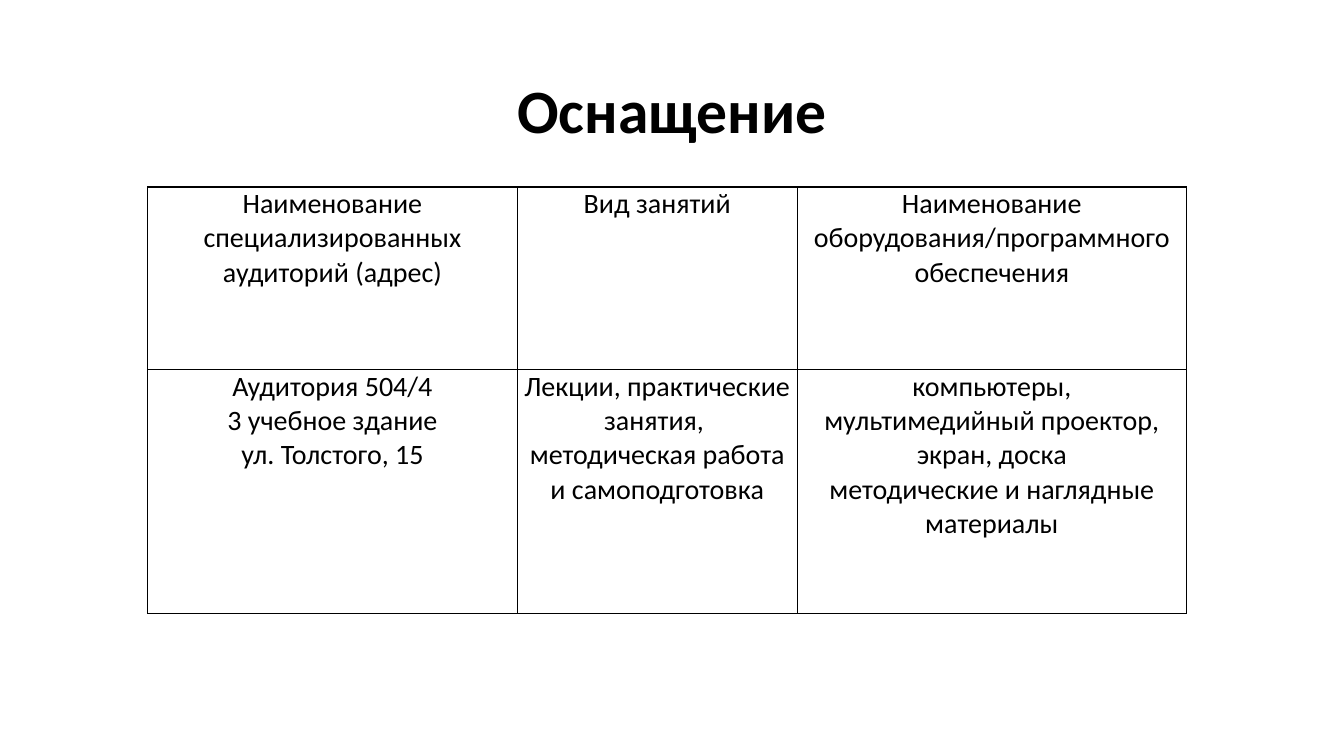
from lxml.etree import SubElement
from pptx import Presentation
from pptx.dml.color import RGBColor
from pptx.enum.text import MSO_ANCHOR as Anchor, PP_ALIGN as Align
from pptx.oxml.ns import qn
from pptx.util import Pt

BLACK = "000000"


def color(hex_string):
    return RGBColor.from_string(hex_string)


def add_text(para, text, size, bold=False):
    para.alignment = Align.CENTER
    span = para.add_run()
    span.text = text
    span.font.name = "Calibri"
    span.font.size = Pt(size)
    span.font.bold = bold
    span.font.color.rgb = color(BLACK)


deck = Presentation()
deck.slide_width, deck.slide_height = Pt(960), Pt(540)
page = deck.slides.add_slide(deck.slide_layouts[6])

# Title
title_box = page.shapes.add_textbox(Pt(66), Pt(28.75), Pt(828), Pt(104.4))
title_frame = title_box.text_frame
title_frame.word_wrap = True
title_frame.vertical_anchor = Anchor.MIDDLE
title_para = title_frame.paragraphs[0]
title_para.line_spacing = 0.9
add_text(title_para, "Оснащение", 44, bold=True)

# Equipment table: each cell is a list of paragraphs
rows = [
    [
        ["Наименование специализированных аудиторий (адрес)"],
        ["Вид занятий"],
        ["Наименование оборудования/программного обеспечения"],
    ],
    [
        ["Аудитория 504/4", "3 учебное здание", "ул. Толстого, 15"],
        ["Лекции, практические занятия, ", "методическая работа", "и самоподготовка"],
        ["компьютеры, мультимедийный проектор, экран, доска",
         "методические и наглядные материалы"],
    ],
]
column_widths = [264, 200, 278]
row_heights = [130.5, 174]

table = page.shapes.add_table(
    len(rows), len(column_widths), Pt(105.5), Pt(133.5),
    Pt(sum(column_widths)), Pt(sum(row_heights))).table
table.first_row = False
table.horz_banding = False
for column, width in zip(table.columns, column_widths):
    column.width = Pt(width)

for row, height, row_texts in zip(table.rows, row_heights, rows):
    row.height = Pt(height)
    for cell, texts in zip(row.cells, row_texts):
        cell.margin_left = cell.margin_right = Pt(5)
        cell.margin_top = cell.margin_bottom = 0

        # Black borders precede the fill in the cell properties
        properties = cell._tc.get_or_add_tcPr()
        for side in ("a:lnL", "a:lnR", "a:lnT", "a:lnB"):
            line = SubElement(properties, qn(side), w=str(Pt(1)))
            line_fill = SubElement(line, qn("a:solidFill"))
            SubElement(line_fill, qn("a:srgbClr"), val=BLACK)
        cell.fill.background()

        frame = cell.text_frame
        for index, text in enumerate(texts):
            para = frame.add_paragraph() if index else frame.paragraphs[0]
            add_text(para, text, 20)

deck.save("out.pptx")
